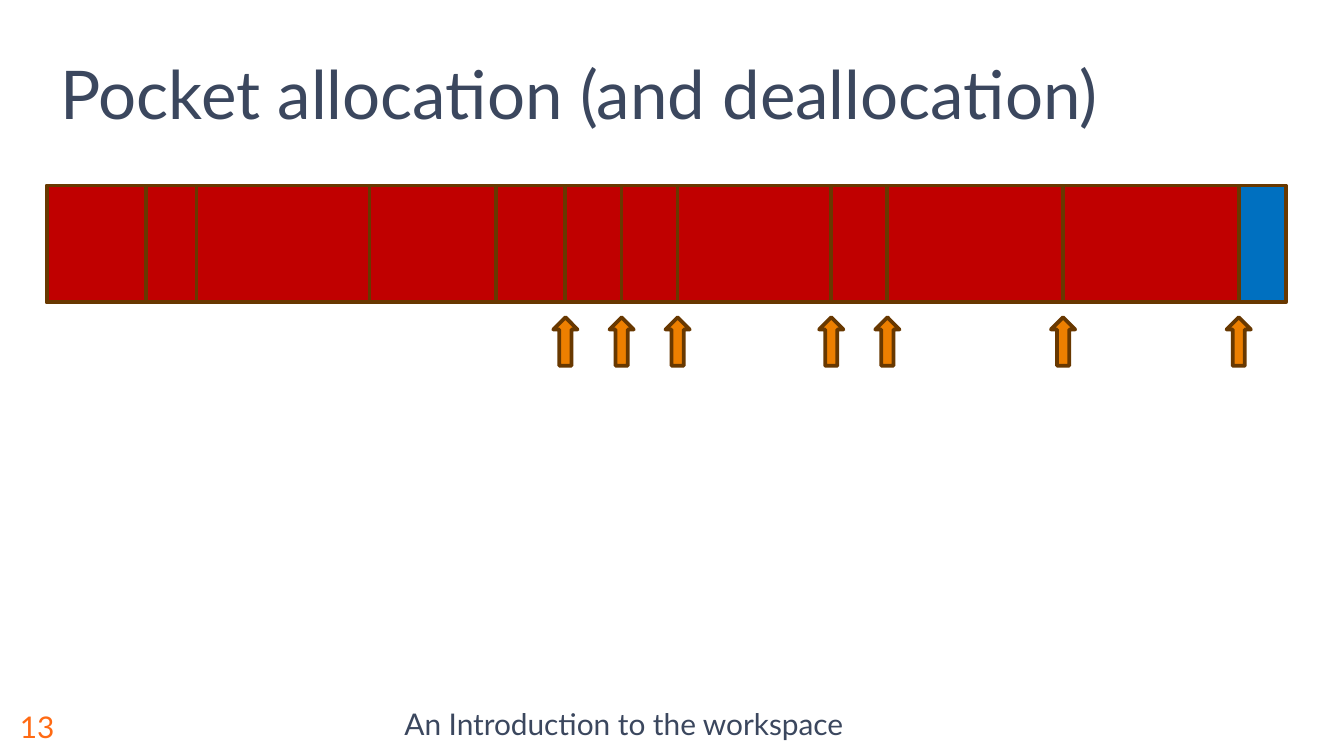
import pptx
import pptx.dml.color
import pptx.enum.shapes
import pptx.enum.text
import pptx.util

Pt = pptx.util.Pt
Shape = pptx.enum.shapes.MSO_SHAPE
Anchor = pptx.enum.text.MSO_ANCHOR
Align = pptx.enum.text.PP_ALIGN

COLOURS = {
    "text": "3B475E",
    "number": "FF6A13",
    "free": "0070C0",
    "used": "C00000",
    "arrow": "ED7F00",
    "outline": "683800",
}

BAR_TOP, BAR_HEIGHT, BAR_RIGHT = 99.4, 62.6, 689
# Left edge of the bar, then the right edge of each allocated pocket.
POCKET_EDGES = [25.2, 78.4, 105.3, 198, 265.7, 302.9, 333, 363, 445.3, 475.4, 569.5, 663.6]
FIRST_ARROW_EDGE = 5
ARROW_TOP, ARROW_WIDTH, ARROW_HEIGHT = 170, 13, 26


class SlidePainter:
    font = "Lato"
    line_width = 2

    def __init__(self, slide):
        self.slide = slide

    def colour(self, name):
        return pptx.dml.color.RGBColor.from_string(COLOURS[name])

    def text(self, wording, left, top, width, height, size, colour="text",
             anchor=Anchor.MIDDLE, align=Align.LEFT, spacing=1.0):
        box = self.slide.shapes.add_textbox(Pt(left), Pt(top), Pt(width), Pt(height))
        frame = box.text_frame
        frame.word_wrap = True
        frame.vertical_anchor = anchor
        para = frame.paragraphs[0]
        para.alignment = align
        para.line_spacing = spacing
        span = para.add_run()
        span.text = wording
        span.font.name = self.font
        span.font.size = Pt(size)
        span.font.color.rgb = self.colour(colour)

    def shape(self, kind, left, top, width, height, fill):
        shape = self.slide.shapes.add_shape(kind, Pt(left), Pt(top), Pt(width), Pt(height))
        shape.shadow.inherit = False
        shape.fill.solid()
        shape.fill.fore_color.rgb = self.colour(fill)
        shape.line.color.rgb = self.colour("outline")
        shape.line.width = Pt(self.line_width)
        return shape

    def bar(self, left, right, fill):
        self.shape(Shape.RECTANGLE, left, BAR_TOP, right - left, BAR_HEIGHT, fill)

    def arrow(self, centre):
        """Draw an upward arrow under the bar, pointing at one edge."""
        arrow = self.shape(Shape.DOWN_ARROW, centre - ARROW_WIDTH / 2, ARROW_TOP,
                           ARROW_WIDTH, ARROW_HEIGHT, "arrow")
        arrow.rotation = 180


def main():
    deck = pptx.Presentation()
    deck.slide_width, deck.slide_height = Pt(720), Pt(405)
    page = SlidePainter(deck.slides.add_slide(deck.slide_layouts[6]))

    page.text("An Introduction to the workspace", 56, 373.5, 556.5, 31.5, 16,
              align=Align.CENTER, spacing=0.8)
    page.text("13", 3.6, 373.5, 52.4, 31.5, 16, colour="number")
    page.text("Pocket allocation (and deallocation)", 25.2, 21, 590.4, 54, 36,
              anchor=Anchor.BOTTOM)

    page.bar(POCKET_EDGES[0], BAR_RIGHT, "free")
    for left, right in zip(POCKET_EDGES, POCKET_EDGES[1:]):
        page.bar(left, right, "used")
    for edge in POCKET_EDGES[FIRST_ARROW_EDGE:]:
        page.arrow(edge)

    deck.save("out.pptx")


if __name__ == "__main__":
    main()
